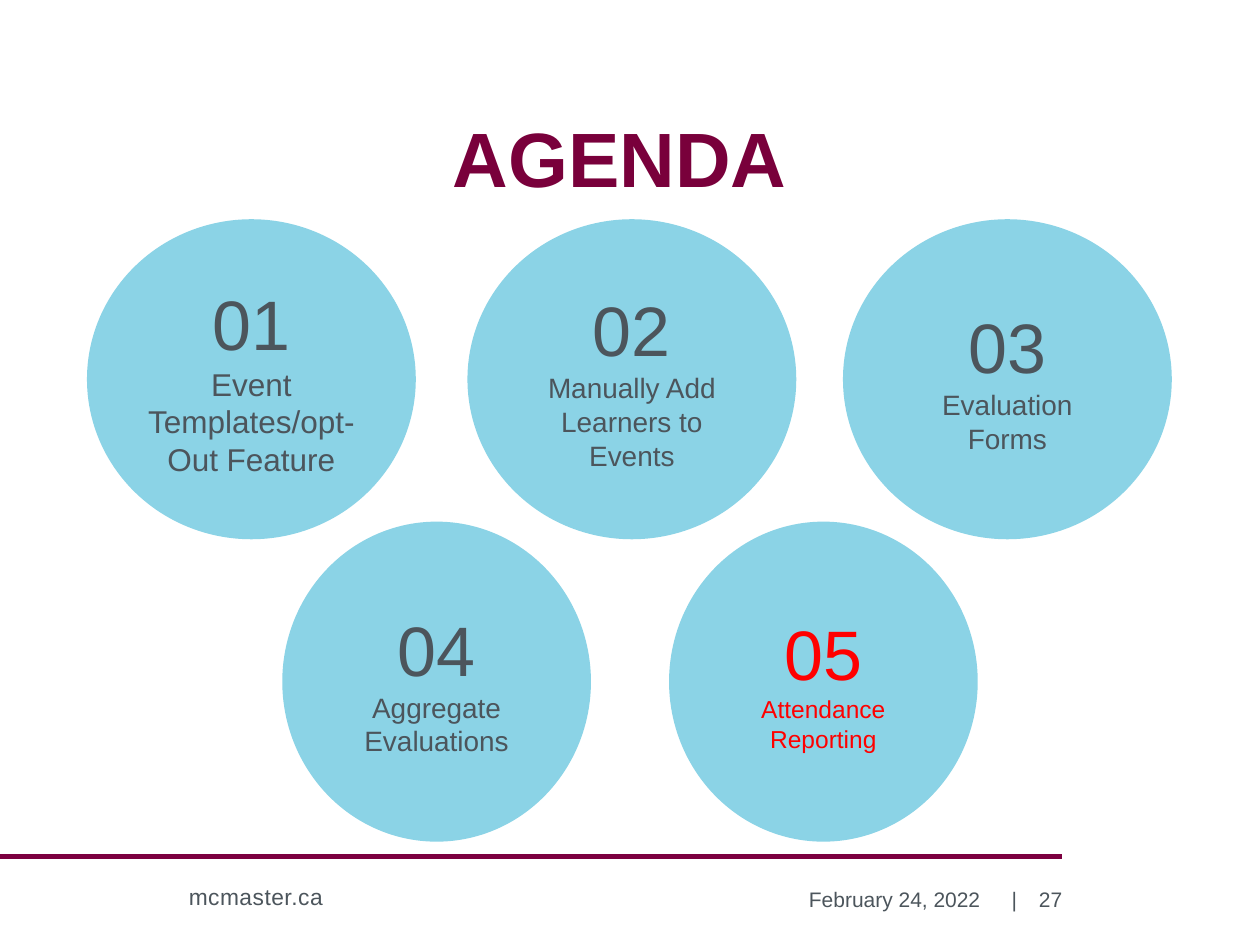
"""Build the agenda slide: five numbered circles above a footer."""
from lxml.etree import SubElement
from pptx import Presentation
from pptx.dml.color import RGBColor as RGB
from pptx.enum.shapes import MSO_CONNECTOR as Line, MSO_SHAPE as Shape
from pptx.enum.text import MSO_ANCHOR as Anchor, PP_ALIGN as Align
from pptx.oxml.ns import qn
from pptx.util import Inches, Pt

WHITE = RGB(0xFF, 0xFF, 0xFF)
BLUE = RGB(0x8B, 0xD3, 0xE6)
GREY = RGB(0x4C, 0x55, 0x5C)
RED = RGB(0xFF, 0x00, 0x00)
PLUM = RGB(0x79, 0x00, 0x3B)
WINE = RGB(0x7C, 0x00, 0x40)

ROWS = [
    {"top": 1.74, "wide": 2.61, "items": [
        (0.69, "Event Templates/opt- Out Feature", 18, GREY),
        (3.71, "Manually Add Learners to Events", 16, GREY),
        (6.69, "Evaluation Forms", 16, GREY)]},
    {"top": 4.14, "wide": 2.45, "items": [
        (2.24, "Aggregate Evaluations", 16, GREY),
        (5.31, "Attendance Reporting", 14, RED)]},
]
HIGH = 2.54
RULE = {"y": 6.8, "end": 8.43, "width": 3}

TITLE = ("AGENDA", (0.12, 0.89, 9.6, 0.72),
         {"size": Pt(44), "color": PLUM, "bold": True},
         {"vertical_anchor": Anchor.BOTTOM, "margin_bottom": 0},
         {"alignment": Align.CENTER, "line_spacing": 1.5})
SMALL = {"size": Pt(12), "color": GREY}
MID = {"vertical_anchor": Anchor.MIDDLE}
RIGHT = {"alignment": Align.RIGHT}
SITE = ("mcmaster.ca", (1.4, 6.96, 2.74, 0.32),
        {"size": Pt(13), "color": GREY}, {}, {})
FOOT = [
    ("|", (7.92, 6.94, 0.25, 0.4), SMALL, MID, RIGHT),
    ("27", (7.91, 6.94, 0.52, 0.4), SMALL, {**MID, "margin_right": 0}, RIGHT),
    ("February 24, 2022", (5.74, 6.94, 2.14, 0.4), SMALL, MID, RIGHT),
]


def apply(obj, style):
    for key, value in style.items():
        setattr(obj, key, value)


def write(para, text, font, form):
    run = para.add_run()
    run.text = text
    style = {"name": "Arial", **font}
    run.font.color.rgb = style.pop("color")
    apply(run.font, style)
    apply(para, form)
    return run


def label(slide, text, place, font, frame, form):
    box = slide.shapes.add_textbox(*map(Inches, place)).text_frame
    apply(box, {"word_wrap": True, **frame})
    return write(box.paragraphs[0], text, font, form)


def circle(slide, place, num, text, size, color):
    disc = slide.shapes.add_shape(Shape.OVAL, *map(Inches, place))
    disc.shadow.inherit = False
    disc.fill.solid()
    disc.fill.fore_color.rgb = BLUE
    disc.line.fill.background()
    box = disc.text_frame
    apply(box, {"word_wrap": True, **MID})
    form = {"alignment": Align.CENTER}
    write(box.paragraphs[0], f"{num:02}", {"size": Pt(40), "color": color}, form)
    write(box.add_paragraph(), text, {"size": Pt(size), "color": color}, form)


def rule(slide):
    y = Inches(RULE["y"])
    bar = slide.shapes.add_connector(Line.STRAIGHT, 0, y, Inches(RULE["end"]), y)
    bar.line.color.rgb = WINE
    bar.line.width = Pt(RULE["width"])
    SubElement(bar._element.spPr, qn("a:effectLst"))


def main():
    deck = Presentation()
    deck.slide_width, deck.slide_height = Inches(10), Inches(7.5)
    slide = deck.slides.add_slide(deck.slide_layouts[6])
    slide.background.fill.solid()
    slide.background.fill.fore_color.rgb = WHITE
    rule(slide)
    site = label(slide, *SITE)
    site._r.get_or_add_rPr().set("spc", "30")
    for part in [TITLE, *FOOT]:
        label(slide, *part)
    num = 0
    for row in ROWS:
        for left, *item in row["items"]:
            num += 1
            circle(slide, (left, row["top"], row["wide"], HIGH), num, *item)
    deck.save("out.pptx")


if __name__ == "__main__":
    main()
